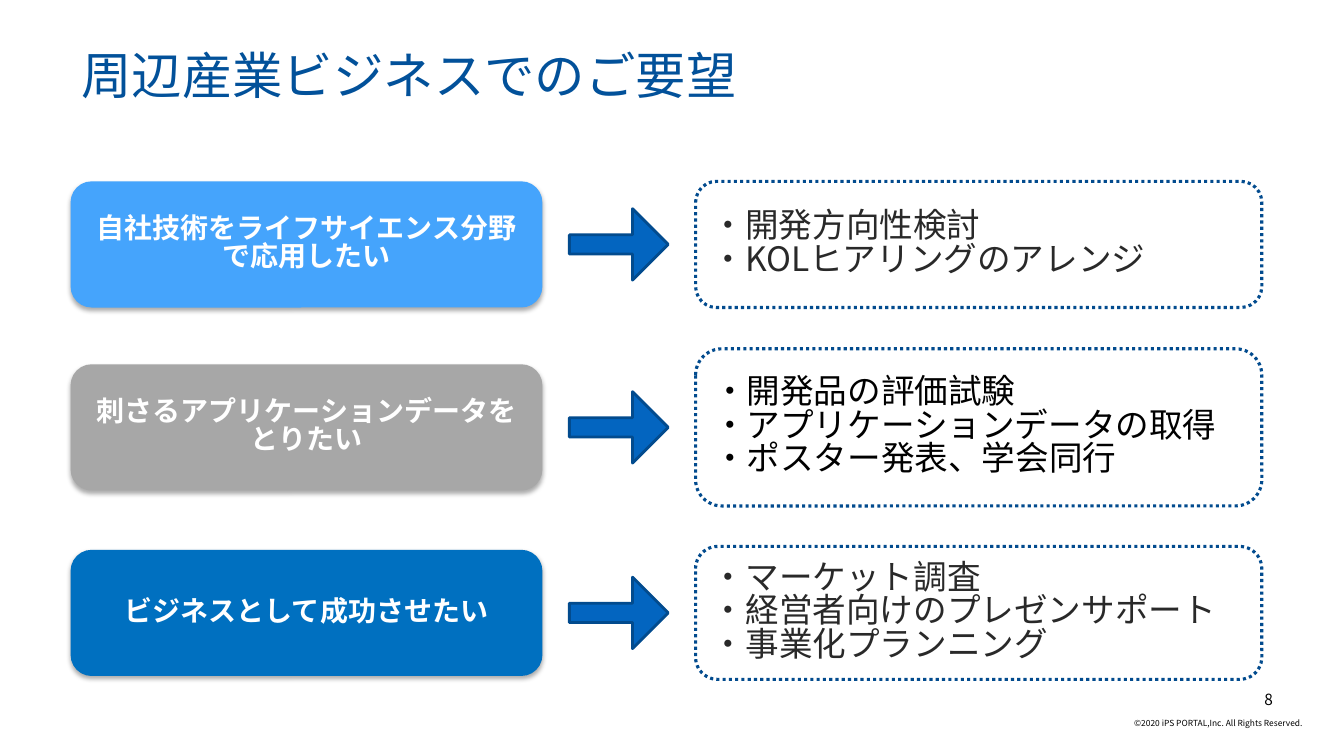
from lxml import etree
from pptx import Presentation
from pptx.dml.color import RGBColor
from pptx.enum.dml import MSO_LINE
from pptx.enum.shapes import MSO_SHAPE as Preset
from pptx.enum.text import MSO_ANCHOR as Anchor, PP_ALIGN as Align
from pptx.oxml import parse_xml
from pptx.oxml.ns import nsdecls, qn
from pptx.util import Cm, Pt

FONT = "Noto Sans CJK JP"
WHITE = RGBColor(0xFF, 0xFF, 0xFF)
BLACK = RGBColor(0x00, 0x00, 0x00)
CHARCOAL = RGBColor(0x29, 0x29, 0x29)
TITLE_BLUE = RGBColor(0x02, 0x51, 0x9A)
ARROW_BLUE = RGBColor(0x03, 0x65, 0xC0)
OUTLINE_BLUE = RGBColor(0x02, 0x4B, 0x8E)
SKY = RGBColor(0x45, 0xA4, 0xFC)
GREY = RGBColor(0xA7, 0xA7, 0xA7)
BLUE = RGBColor(0x00, 0x70, 0xC0)

ROW_LEFT, ROW_WIDTH = Cm(1.78), Cm(30.02)
DEMAND_WIDTH, DEMAND_HEIGHT = Cm(11.89), Cm(3.18)
ARROW_OFFSET, ARROW_WIDTH, ARROW_HEIGHT = Cm(12.57), Cm(2.49), Cm(1.8)
MEASURES_OFFSET = Cm(15.75)

# top, height, demand, demand colour, measures, measures colour
ROWS = [
    (Cm(4.57), Cm(3.18), "自社技術をライフサイエンス分野で応用したい", SKY,
     ["・開発方向性検討", "・KOLヒアリングのアレンジ"], CHARCOAL),
    (Cm(8.79), Cm(3.96), "刺さるアプリケーションデータをとりたい", GREY,
     ["・開発品の評価試験", "・アプリケーションデータの取得", "・ポスター発表、学会同行"], BLACK),
    (Cm(13.77), Cm(3.35), "ビジネスとして成功させたい", BLUE,
     ["・マーケット調査", "・経営者向けのプレゼンサポート", "・事業化プランニング"], CHARCOAL),
]


def write(frame, lines, size, color, align=Align.LEFT, anchor=Anchor.MIDDLE,
          bold=False, spacing=0.83):
    frame.word_wrap = True
    frame.vertical_anchor = anchor
    for i, line in enumerate(lines):
        paragraph = frame.add_paragraph() if i else frame.paragraphs[0]
        paragraph.text = line
        paragraph.alignment = align
        paragraph.line_spacing = spacing
        font = paragraph.font
        font.size, font.bold, font.name = Pt(size), bold, FONT
        font.color.rgb = color
        defaults = paragraph._p.pPr.find(qn("a:defRPr"))
        etree.SubElement(defaults, qn("a:ea")).set("typeface", FONT)


def add_label(slide, box, text, size, color, inset=None, **style):
    frame = slide.shapes.add_textbox(*box).text_frame
    if inset is not None:
        frame.margin_left = frame.margin_right = inset
        frame.margin_top = frame.margin_bottom = inset
    write(frame, [text], size, color, **style)


def add_filled(slide, preset, box, fill):
    shape = slide.shapes.add_shape(preset, *box)
    shape.shadow.inherit = False
    shape.fill.solid()
    shape.fill.fore_color.rgb = fill
    shape.line.fill.background()
    return shape


def outline(shape, width):
    shape.line.color.rgb = OUTLINE_BLUE
    shape.line.width = Pt(width)


def drop_shadow(shape):
    effects = shape._element.spPr.find(qn("a:effectLst"))
    effects.append(parse_xml(
        f'<a:outerShdw {nsdecls("a")} blurRad="{Pt(3.5)}" dist="{Pt(2.2)}" '
        'dir="5400000" rotWithShape="0"><a:srgbClr val="000000">'
        '<a:alpha val="32000"/></a:srgbClr></a:outerShdw>'))


def add_row(slide, box, demand, demand_color, measures, measures_color):
    """Demand, arrow and measures, all centred on the middle of the box."""
    left, top, width, height = box
    middle = top + height // 2

    demand_box = (left, middle - DEMAND_HEIGHT // 2, DEMAND_WIDTH, DEMAND_HEIGHT)
    card = add_filled(slide, Preset.ROUNDED_RECTANGLE, demand_box, demand_color)
    drop_shadow(card)
    write(card.text_frame, [demand], 20, WHITE, Align.CENTER, bold=True)

    arrow_box = (left + ARROW_OFFSET, middle - ARROW_HEIGHT // 2,
                 ARROW_WIDTH, ARROW_HEIGHT)
    arrow = add_filled(slide, Preset.RIGHT_ARROW, arrow_box, ARROW_BLUE)
    arrow.adjustments[0] = 0.27
    outline(arrow, 2)

    measures_box = (left + MEASURES_OFFSET, top, width - MEASURES_OFFSET, height)
    panel = add_filled(slide, Preset.ROUNDED_RECTANGLE, measures_box, WHITE)
    outline(panel, 2.25)
    panel.line.dash_style = MSO_LINE.ROUND_DOT
    write(panel.text_frame, measures, 24, measures_color)


def add_footer(slide, box):
    left, top, width, height = box
    add_label(slide, (left, top, width - Cm(0.66), Cm(0.84)), "8", 11, BLACK,
              Cm(0.18), align=Align.RIGHT)
    add_label(slide, (left, top + height - Cm(0.46), width, Cm(0.46)),
              "©2020 iPS PORTAL,Inc. All Rights Reserved.", 6, BLACK,
              Cm(0.1), align=Align.RIGHT)


def main():
    deck = Presentation()
    deck.slide_width, deck.slide_height = Cm(33.87), Cm(19.05)
    slide = deck.slides.add_slide(deck.slide_layouts[6])
    add_label(slide, (Cm(1.8), Cm(0.97), Cm(17.73), Cm(1.8)),
              "周辺産業ビジネスでのご要望", 36, TITLE_BLUE, anchor=Anchor.BOTTOM)
    for top, height, *content in ROWS:
        add_row(slide, (ROW_LEFT, top, ROW_WIDTH, height), *content)
    add_footer(slide, (Cm(26.34), Cm(17.25), Cm(6.58), Cm(1.22)))
    deck.save("out.pptx")


if __name__ == "__main__":
    main()
